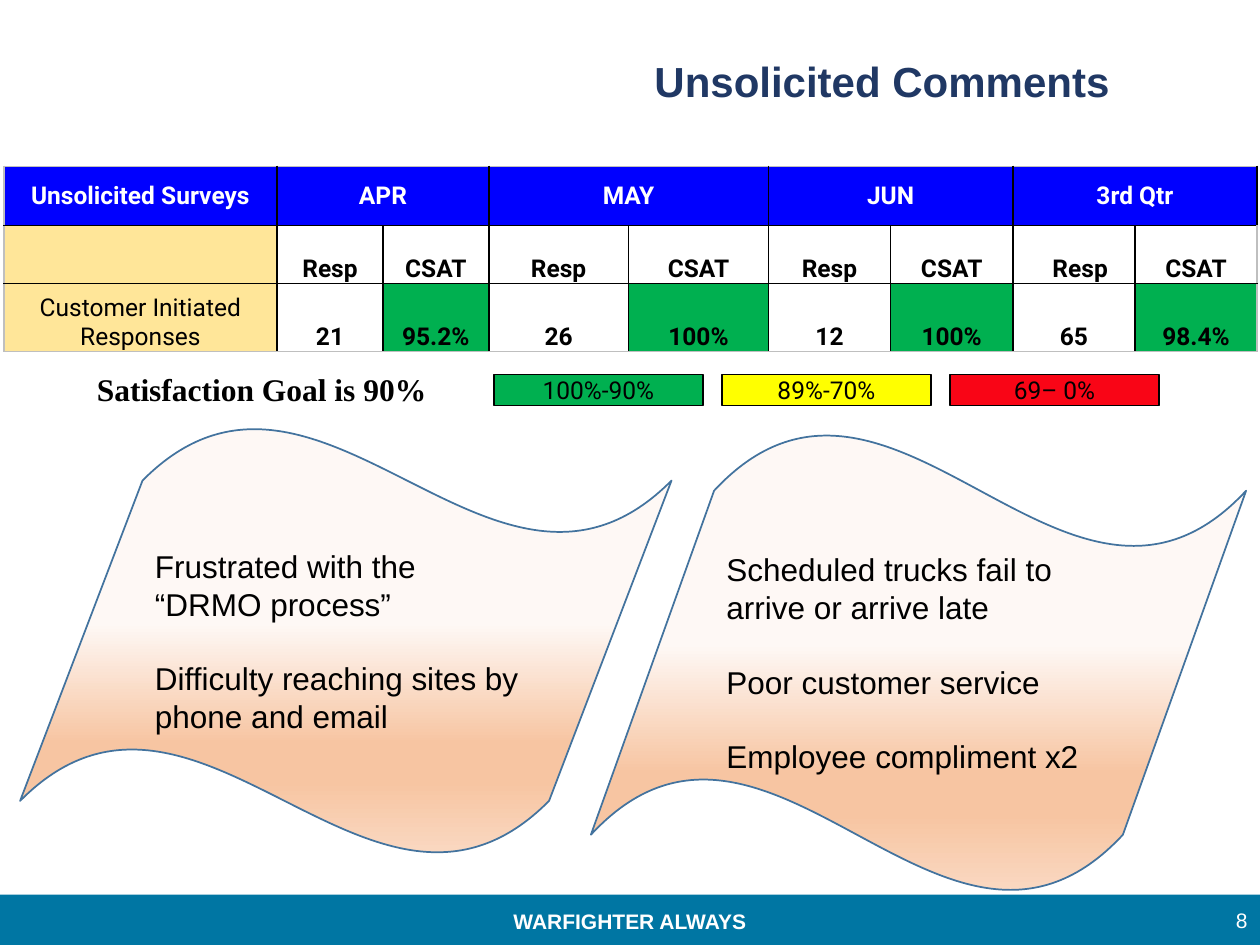
from dataclasses import dataclass

from lxml.etree import SubElement
from pptx import Presentation
from pptx.dml.color import RGBColor
from pptx.enum.shapes import MSO_SHAPE as Preset
from pptx.enum.text import MSO_ANCHOR as Anchor, PP_ALIGN as Align
from pptx.oxml.ns import qn
from pptx.util import Inches, Pt

# Slide grid: 100 columns by 75 rows
WIDTH, HEIGHT = Inches(10), Inches(7.5)
COL, ROW = WIDTH / 100, HEIGHT / 75

WHITE = RGBColor(0xFF, 0xFF, 0xFF)
BLACK = RGBColor(0, 0, 0)
NAVY = RGBColor(0x20, 0x38, 0x64)
TEAL = RGBColor(0x00, 0x76, 0xA3)
BLUE = RGBColor(0x00, 0x00, 0xFF)
SAND = RGBColor(0xFF, 0xE6, 0x99)
GREEN = RGBColor(0x00, 0xB0, 0x50)
YELLOW = RGBColor(0xFF, 0xFF, 0x00)
RED = RGBColor(0xF9, 0x05, 0x16)
GREY = RGBColor(0xBF, 0xBF, 0xBF)
WAVE_LINE = RGBColor(0x43, 0x73, 0x9E)
WAVE_STOPS = [(46, "FEF8F5"), (74, "F7C5A2"), (83, "F7C5A2"), (100, "FAD8C1")]


@dataclass(frozen=True)
class Area:
    """Left, top, width and height in grid columns and rows."""
    left: float
    top: float
    width: float
    height: float

    def emu(self) -> tuple:
        return (int(self.left * COL), int(self.top * ROW),
                int(self.width * COL), int(self.height * ROW))


@dataclass(frozen=True)
class Style:
    size: float
    font: str = "Arial"
    color: RGBColor = BLACK
    bold: bool = False
    align: Align = Align.LEFT


@dataclass(frozen=True)
class Comment:
    area: Area
    lines: tuple  # (text, space before in points)


@dataclass(frozen=True)
class Month:
    name: str
    responses: str
    score: str
    width: float  # width of each of its two columns
    indent: float = 0  # left shift of the "Resp" heading


def add_text(para, text: str, style: Style) -> None:
    para.alignment = style.align
    span = para.add_run()
    span.text = text
    span.font.size, span.font.name = Pt(style.size), style.font
    span.font.bold, span.font.color.rgb = style.bold, style.color


def add_box(page, area: Area, text: str, style: Style, anchor=Anchor.MIDDLE) -> None:
    frame = page.shapes.add_textbox(*area.emu()).text_frame
    frame.word_wrap, frame.vertical_anchor = True, anchor
    add_text(frame.paragraphs[0], text, style)


def add_bar(page, area: Area, fill: RGBColor, line: RGBColor | None = None):
    bar = page.shapes.add_shape(Preset.RECTANGLE, *area.emu())
    bar.shadow.inherit = False
    bar.fill.solid()
    bar.fill.fore_color.rgb = fill
    if line is None:
        bar.line.fill.background()
    else:
        bar.line.color.rgb, bar.line.width = line, Pt(0.75)
    return bar


def add_wave(page, comment: Comment) -> None:
    wave = page.shapes.add_shape(Preset.WAVE, *comment.area.emu())
    wave.adjustments[0], wave.adjustments[1] = 0.125, -0.094
    wave.shadow.inherit = False
    wave.line.color.rgb, wave.line.width = WAVE_LINE, Pt(1)
    wave.fill.gradient()
    wave.fill.gradient_angle = 270
    stops = wave._element.spPr.find(".//" + qn("a:gsLst"))
    for stop in list(stops):
        stops.remove(stop)
    for position, color in WAVE_STOPS:
        stop = SubElement(stops, qn("a:gs"), pos=str(position * 1000))
        SubElement(stop, qn("a:srgbClr"), val=color)
    frame = wave.text_frame
    frame.word_wrap, frame.vertical_anchor = True, Anchor.MIDDLE
    for number, (text, gap) in enumerate(comment.lines):
        para = frame.add_paragraph() if number else frame.paragraphs[0]
        if gap:
            para.space_before = Pt(gap)
        add_text(para, text, Style(18))


def set_borders(grid, row: int, column: int) -> None:
    """Black inner rules and a light outer frame."""
    outer = {"lnL": column == 0, "lnR": column == len(grid.columns) - 1,
             "lnT": row == 0, "lnB": row == len(grid.rows) - 1}
    properties = grid.cell(row, column)._tc.get_or_add_tcPr()
    for side, is_outer in outer.items():
        line = SubElement(properties, qn("a:" + side), w=str(Pt(1)))
        fill = SubElement(line, qn("a:solidFill"))
        SubElement(fill, qn("a:srgbClr"), val=str(GREY if is_outer else BLACK))


def fill_cell(cell, text: str, style: Style, fill: RGBColor | None,
              anchor=Anchor.BOTTOM, indent: float = 0) -> None:
    cell.margin_left = int((0.1 + indent) * COL)
    cell.margin_right = cell.margin_top = int(0.1 * COL)
    cell.margin_bottom = 0
    cell.vertical_anchor = anchor
    if fill is None:
        cell.fill.background()
    else:
        cell.fill.solid()
        cell.fill.fore_color.rgb = fill
    if text:
        add_text(cell.text_frame.paragraphs[0], text, style)


def add_survey_table(page, area: Area, months: list) -> None:
    grid = page.shapes.add_table(3, 1 + 2 * len(months), *area.emu()).table
    grid.first_row = grid.horz_banding = False
    widths = [21.7] + [month.width for month in months for _ in range(2)]
    for column, width in zip(grid.columns, widths):
        column.width = int(width * COL)
    for row, height in zip(grid.rows, (4.7, 4.6, 5.4)):
        row.height = int(height * ROW)
    for row in range(len(grid.rows)):
        for column in range(len(widths)):
            set_borders(grid, row, column)

    header = Style(14, "Roboto", WHITE, True, Align.CENTER)
    value = Style(14, "Roboto", BLACK, True, Align.CENTER)
    label = Style(14, "Roboto", align=Align.CENTER)
    fill_cell(grid.cell(0, 0), "Unsolicited Surveys", header, BLUE, Anchor.MIDDLE)
    fill_cell(grid.cell(1, 0), "", label, SAND)
    fill_cell(grid.cell(2, 0), "Customer Initiated Responses", label, SAND)
    for number, month in enumerate(months):
        left = 1 + 2 * number
        right = left + 1
        grid.cell(0, left).merge(grid.cell(0, right))
        fill_cell(grid.cell(0, left), month.name, header, BLUE, Anchor.MIDDLE)
        fill_cell(grid.cell(1, left), "Resp", value, None, indent=month.indent)
        fill_cell(grid.cell(1, right), "CSAT", value, None)
        fill_cell(grid.cell(2, left), month.responses, value, None)
        fill_cell(grid.cell(2, right), month.score, value, GREEN)


MONTHS = [Month("APR", "21", "95.2%", 8.4), Month("MAY", "26", "100%", 11.1),
          Month("JUN", "12", "100%", 9.7), Month("3rd Qtr", "65", "98.4%", 9.7, 1)]
LEGEND = [("100%-90%", GREEN), ("89%-70%", YELLOW), ("69– 0%", RED)]
COMMENTS = [
    Comment(Area(1.6, 33.9, 51.7, 33.9),
            (("Frustrated with the", 0), ("“DRMO process”", 0),
             ("Difficulty reaching sites by phone and email", 21))),
    Comment(Area(46.9, 34.4, 52, 36.4),
            (("Scheduled trucks fail to arrive or arrive late", 0),
             ("Poor customer service", 21), ("Employee compliment x2", 21))),
]


def main() -> None:
    deck = Presentation()
    deck.slide_width, deck.slide_height = WIDTH, HEIGHT
    page = deck.slides.add_slide(deck.slide_layouts[5])

    # Title
    title = page.shapes.title
    title.left, title.top, title.width, title.height = Area(40, 0, 60, 12.8).emu()
    title.text_frame.vertical_anchor = Anchor.MIDDLE
    add_text(title.text_frame.paragraphs[0], "Unsolicited Comments",
             Style(24, color=NAVY, bold=True, align=Align.CENTER))

    # Footer
    add_bar(page, Area(0, 71, 100, 4), TEAL)
    add_box(page, Area(0, 71.6, 100, 3), "WARFIGHTER ALWAYS",
            Style(12, color=WHITE, bold=True, align=Align.CENTER))
    add_box(page, Area(95, 71, 5, 4), "8", Style(12, color=WHITE, align=Align.RIGHT))

    # Survey results
    add_survey_table(page, Area(0.3, 13.2, 99.7, 14.7), MONTHS)

    # Goal and legend
    add_box(page, Area(6.7, 28.9, 87.4, 4.2), "Satisfaction Goal is 90%",
            Style(18, "Times New Roman", bold=True), Anchor.TOP)
    for number, (text, color) in enumerate(LEGEND):
        bar = add_bar(page, Area(39.2 + 18.1 * number, 29.7, 16.6, 2.5), color, BLACK)
        bar.text_frame.word_wrap = False
        bar.text_frame.vertical_anchor = Anchor.MIDDLE
        add_text(bar.text_frame.paragraphs[0], text,
                 Style(14, "Roboto", align=Align.CENTER))

    # Customer comments
    for comment in COMMENTS:
        add_wave(page, comment)

    deck.save("out.pptx")


if __name__ == "__main__":
    main()
